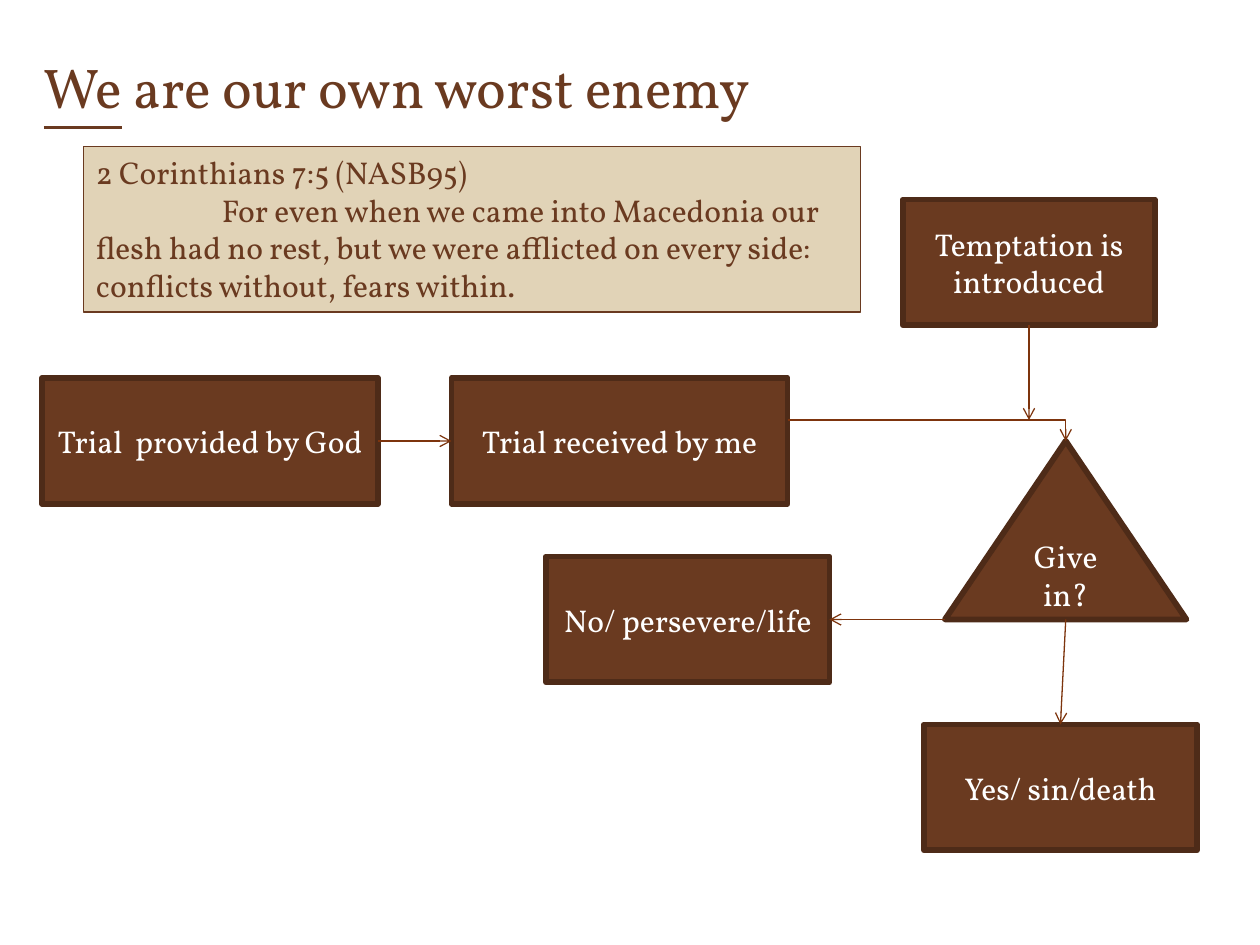
import pptx
import pptx.util
import pptx.dml.color
import pptx.enum.shapes
import pptx.enum.text
import pptx.oxml.ns
import lxml.etree

COLORS = {"brown": "6A3A20", "edge": "4E2B18", "arrow": "7D340D", "sand": "E1D3B7", "white": "FFFFFF"}
FONT = "Vollkorn"
SHAPES = pptx.enum.shapes.MSO_SHAPE
CONNECTORS = pptx.enum.shapes.MSO_CONNECTOR
ALIGN = pptx.enum.text.PP_ALIGN
ANCHOR = pptx.enum.text.MSO_ANCHOR

presentation = pptx.Presentation()
presentation.slide_width = pptx.util.Inches(10)
presentation.slide_height = pptx.util.Inches(7.5)
slide = presentation.slides.add_slide(presentation.slide_layouts[6])
column = presentation.slide_width / 120
row = presentation.slide_height / 90


def add_run(paragraph, text, size, color, underline=None):
    run = paragraph.add_run()
    run.text = text
    run.font.name = FONT
    run.font.size = pptx.util.Pt(size)
    run.font.underline = underline
    run.font.color.rgb = pptx.dml.color.RGBColor.from_string(COLORS[color])


def add_box(kind, left, top, width, height, fill, line, line_width):
    shape = slide.shapes.add_shape(
        kind, int(left * column), int(top * row), int(width * column), int(height * row))
    shape.shadow.inherit = False
    shape.fill.solid()
    shape.fill.fore_color.rgb = pptx.dml.color.RGBColor.from_string(COLORS[fill])
    shape.line.color.rgb = pptx.dml.color.RGBColor.from_string(COLORS[line])
    shape.line.width = pptx.util.Pt(line_width)
    shape.text_frame.word_wrap = True
    return shape


title = slide.shapes.add_textbox(int(3 * column), 0, int(102 * column), int(12 * row))
title.text_frame.word_wrap = True
title.text_frame.vertical_anchor = ANCHOR.BOTTOM
add_run(title.text_frame.paragraphs[0], "We", 32, "brown", True)
add_run(title.text_frame.paragraphs[0], " are our own worst enemy", 32, "brown")

steps = [
    (SHAPES.RECTANGLE, 88, 69, 26, 12, "Yes/ sin/death"),
    (SHAPES.RECTANGLE, 52, 53, 27, 12, "No/ persevere/life"),
    (SHAPES.RECTANGLE, 86, 19, 24, 12, "Temptation is introduced"),
    (SHAPES.RECTANGLE, 43, 36, 32, 12, "Trial received by me"),
    (SHAPES.RECTANGLE, 4, 36, 32, 12, "Trial  provided by God"),
    (SHAPES.ISOSCELES_TRIANGLE, 90, 42, 23, 17, "Give in?"),
]
for kind, left, top, width, height, text in steps:
    step = add_box(kind, left, top, width, height, "brown", "edge", 3.35)
    lxml.etree.SubElement(step.line._get_or_add_ln(), pptx.oxml.ns.qn("a:round"))
    step.text_frame.vertical_anchor = ANCHOR.MIDDLE
    paragraph = step.text_frame.paragraphs[0]
    paragraph.alignment = ALIGN.CENTER
    add_run(paragraph, text, 18, "white")

arrows = [
    (CONNECTORS.STRAIGHT, 36, 42, 43, 42),
    (CONNECTORS.ELBOW, 75, 40, 101.5, 42),
    (CONNECTORS.STRAIGHT, 98, 31, 98, 40),
    (CONNECTORS.STRAIGHT, 90, 59, 79, 59),
    (CONNECTORS.STRAIGHT, 101.5, 59, 101, 69),
]
for kind, start_column, start_row, end_column, end_row in arrows:
    arrow = slide.shapes.add_connector(
        kind, int(start_column * column), int(start_row * row), int(end_column * column), int(end_row * row))
    arrow.line.color.rgb = pptx.dml.color.RGBColor.from_string(COLORS["arrow"])
    arrow.line.width = pptx.util.Pt(0.75)
    lxml.etree.SubElement(arrow.line._get_or_add_ln(), pptx.oxml.ns.qn("a:tailEnd"), type="arrow")
    properties = arrow._element.spPr
    lxml.etree.SubElement(properties, pptx.oxml.ns.qn("a:effectLst"))
    if kind == CONNECTORS.ELBOW:
        properties.find(pptx.oxml.ns.qn("a:prstGeom")).set("prst", "bentConnector2")

verse = add_box(SHAPES.RECTANGLE, 7.96, 13.96, 74, 15.75, "sand", "brown", 0.75)
verse.text_frame.vertical_anchor = ANCHOR.TOP
verse.text_frame.auto_size = pptx.enum.text.MSO_AUTO_SIZE.SHAPE_TO_FIT_TEXT
reference = verse.text_frame.paragraphs[0]
quotation = verse.text_frame.add_paragraph()
tab_stops = lxml.etree.SubElement(quotation._p.get_or_add_pPr(), pptx.oxml.ns.qn("a:tabLst"))
lxml.etree.SubElement(tab_stops, pptx.oxml.ns.qn("a:tab"), pos=str(int(12 * column)), algn="l")
for paragraph, text in [
    (reference, "2 Corinthians 7:5 (NASB95)"),
    (quotation, "\tFor even when we came into Macedonia our flesh had no rest, "
                "but we were afflicted on every side: conflicts without, fears within."),
]:
    paragraph.alignment = ALIGN.LEFT
    add_run(paragraph, text, 18, "brown")

presentation.save("out.pptx")
